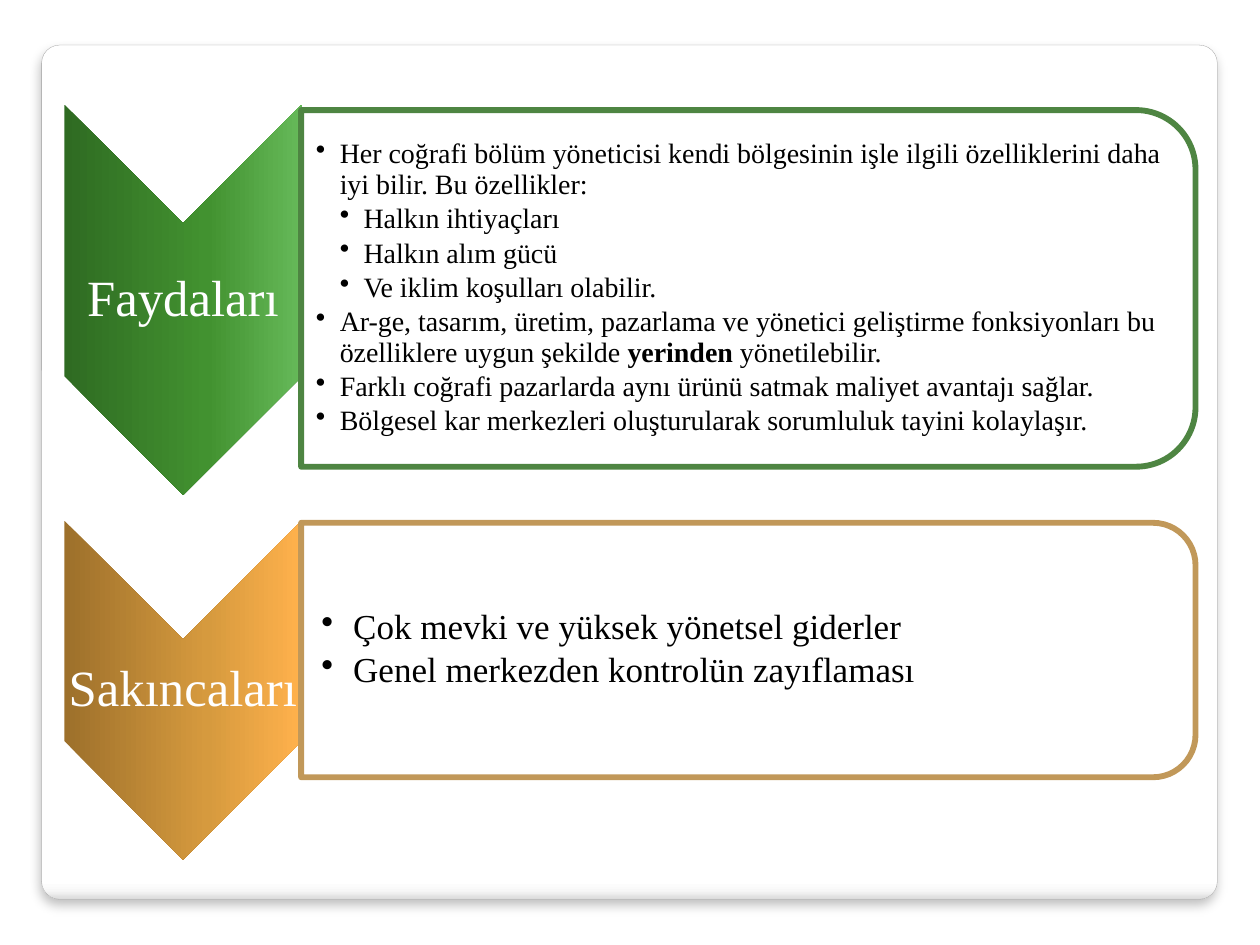
import dataclasses

import lxml.etree
import pptx
import pptx.dml.color
import pptx.enum.shapes
import pptx.enum.text
import pptx.oxml.ns
import pptx.util

Cm = pptx.util.Cm
Pt = pptx.util.Pt
SHAPE = pptx.enum.shapes.MSO_SHAPE
ALIGN = pptx.enum.text.PP_ALIGN
qualified = pptx.oxml.ns.qn


@dataclasses.dataclass(frozen=True)
class Theme:
    font: str = "Times New Roman"
    white: str = "FFFFFF"
    black: str = "000000"
    frame_line: str = "A4A4A4"
    frame_stops: tuple = ((0, "FFFFFF"), (98, "FFFFFF"), (99, "F7F7F7"), (100, "DADADA"))
    green: str = "4E8542"
    green_stops: tuple = ((0, "2F6B22"), (60, "429230"), (100, "66B959"))
    amber: str = "C19859"
    amber_stops: tuple = ((0, "9D702B"), (60, "D69A3E"), (100, "FFB14C"))
    label_size: float = 29
    benefit_size: float = 16
    drawback_size: float = 20


THEME = Theme()
CHEVRON_LEFT = 1.3
CHEVRON_WIDTH = 4.78
PANEL_LEFT = 6.07
PANEL_WIDTH = 18.03
CORNER_INSET = 0.049

BENEFITS = [
    (0, [("Her coğrafi bölüm yöneticisi kendi bölgesinin işle ilgili özelliklerini daha "
          "iyi bilir. Bu özellikler:", False)]),
    (1, [("Halkın ihtiyaçları", False)]),
    (1, [("Halkın alım gücü", False)]),
    (1, [("Ve iklim koşulları olabilir.", False)]),
    (0, [("Ar-ge, tasarım, üretim, pazarlama ve yönetici geliştirme fonksiyonları bu "
          "özelliklere uygun şekilde ", False),
         ("yerinden", True),
         (" yönetilebilir.", False)]),
    (0, [("Farklı coğrafi pazarlarda aynı ürünü satmak maliyet avantajı sağlar.", False)]),
    (0, [("Bölgesel kar merkezleri oluşturularak sorumluluk tayini kolaylaşır.", False)]),
]
DRAWBACKS = [
    (0, [("Çok mevki ve yüksek yönetsel giderler", False)]),
    (0, [("Genel merkezden kontrolün zayıflaması", False)]),
]


def color(value):
    return pptx.dml.color.RGBColor.from_string(value)


def add_child(parent, tag, **attributes):
    return lxml.etree.SubElement(parent, qualified(tag), attributes)


def fill_gradient(shape, stops, angle):
    shape.fill.gradient()
    gradient = shape._element.spPr.find(qualified("a:gradFill"))
    stop_list = gradient.find(qualified("a:gsLst"))
    for stop in list(stop_list):
        stop_list.remove(stop)
    for position, value in stops:
        stop = add_child(stop_list, "a:gs", pos=str(position * 1000))
        add_child(stop, "a:srgbClr", val=value)
    gradient.find(qualified("a:lin")).set("ang", str(angle * 60000))


def add_frame(page):
    frame = page.shapes.add_shape(
        SHAPE.ROUNDED_RECTANGLE, Cm(0.84), Cm(0.91), Cm(23.7), Cm(17.22))
    frame.adjustments[0] = 0.021
    fill_gradient(frame, THEME.frame_stops, 90)
    frame.line.color.rgb = color(THEME.frame_line)
    frame.line.width = Pt(0.16)
    frame.shadow.inherit = False
    effects = frame._element.spPr.find(qualified("a:effectLst"))
    shadow = add_child(effects, "a:outerShdw", blurRad=str(Pt(6)), dist=str(Pt(4)),
                       dir=str(90 * 60000), algn="t", rotWithShape="0")
    shade = add_child(shadow, "a:srgbClr", val=THEME.black)
    add_child(shade, "a:alpha", val="25000")


def add_turned_shape(page, kind, left, top, width, height):
    shift = (width - height) / 2
    shape = page.shapes.add_shape(
        kind, Cm(left + shift), Cm(top - shift), Cm(height), Cm(width))
    shape.rotation = 90
    shape.shadow.inherit = False
    return shape


def add_text_box(page, left, top, width, height, left_margin, margin):
    box = page.shapes.add_textbox(Cm(left), Cm(top), Cm(width), Cm(height))
    frame = box.text_frame
    frame.word_wrap = True
    frame.vertical_anchor = pptx.enum.text.MSO_ANCHOR.MIDDLE
    frame.margin_left = Cm(left_margin)
    frame.margin_right = frame.margin_top = frame.margin_bottom = Cm(margin)
    return frame


def add_span(paragraph, text, size, value, bold=False):
    span = paragraph.add_run()
    span.text = text
    span.font.name = THEME.font
    span.font.size = Pt(size)
    span.font.bold = bold
    span.font.color.rgb = color(value)


def set_spacing(paragraph, after):
    paragraph.line_spacing = 0.9
    paragraph.space_after = Pt(after)


def add_chevron(page, top, height, stops, label):
    chevron = add_turned_shape(
        page, SHAPE.CHEVRON, CHEVRON_LEFT, top, CHEVRON_WIDTH, height)
    fill_gradient(chevron, stops, 270)
    chevron.line.fill.background()
    frame = add_text_box(page, CHEVRON_LEFT, top + CHEVRON_WIDTH / 2, CHEVRON_WIDTH,
                         height - CHEVRON_WIDTH, 0.05, 0.05)
    paragraph = frame.paragraphs[0]
    paragraph.alignment = ALIGN.CENTER
    set_spacing(paragraph, THEME.label_size * 0.35)
    add_span(paragraph, label, THEME.label_size, THEME.white)


def add_panel(page, top, height, outline, items, size, indent, left_margin):
    panel = add_turned_shape(
        page, SHAPE.ROUND_2_SAME_RECTANGLE, PANEL_LEFT, top, PANEL_WIDTH, height)
    panel.fill.solid()
    panel.fill.fore_color.rgb = color(THEME.white)
    panel.line.color.rgb = color(outline)
    panel.line.width = Pt(3.35)
    inset = height * CORNER_INSET
    frame = add_text_box(page, PANEL_LEFT, top + inset, PANEL_WIDTH - inset,
                         height - 2 * inset, left_margin, 0.03)
    for index, (level, spans) in enumerate(items):
        paragraph = frame.add_paragraph() if index else frame.paragraphs[0]
        paragraph.level = level
        properties = paragraph._p.get_or_add_pPr()
        properties.set("marL", str(Cm(indent * (level + 1))))
        properties.set("indent", str(-Cm(indent)))
        add_child(properties, "a:buChar", char="•")
        set_spacing(paragraph, size * 0.15)
        for text, bold in spans:
            add_span(paragraph, text, size, THEME.black, bold)


def main():
    deck = pptx.Presentation()
    deck.slide_width = Cm(25.4)
    deck.slide_height = Cm(19.05)
    page = deck.slides.add_slide(deck.slide_layouts.get_by_name("Blank"))
    add_frame(page)
    add_chevron(page, 2.11, 7.87, THEME.green_stops, "Faydaları")
    add_panel(page, 2.22, 7.19, THEME.green, BENEFITS, THEME.benefit_size, 0.48, 0.3)
    add_chevron(page, 10.5, 6.83, THEME.amber_stops, "Sakıncaları")
    add_panel(page, 10.54, 5.13, THEME.amber, DRAWBACKS, THEME.drawback_size, 0.64, 0.41)
    deck.save("out.pptx")


if __name__ == "__main__":
    main()
